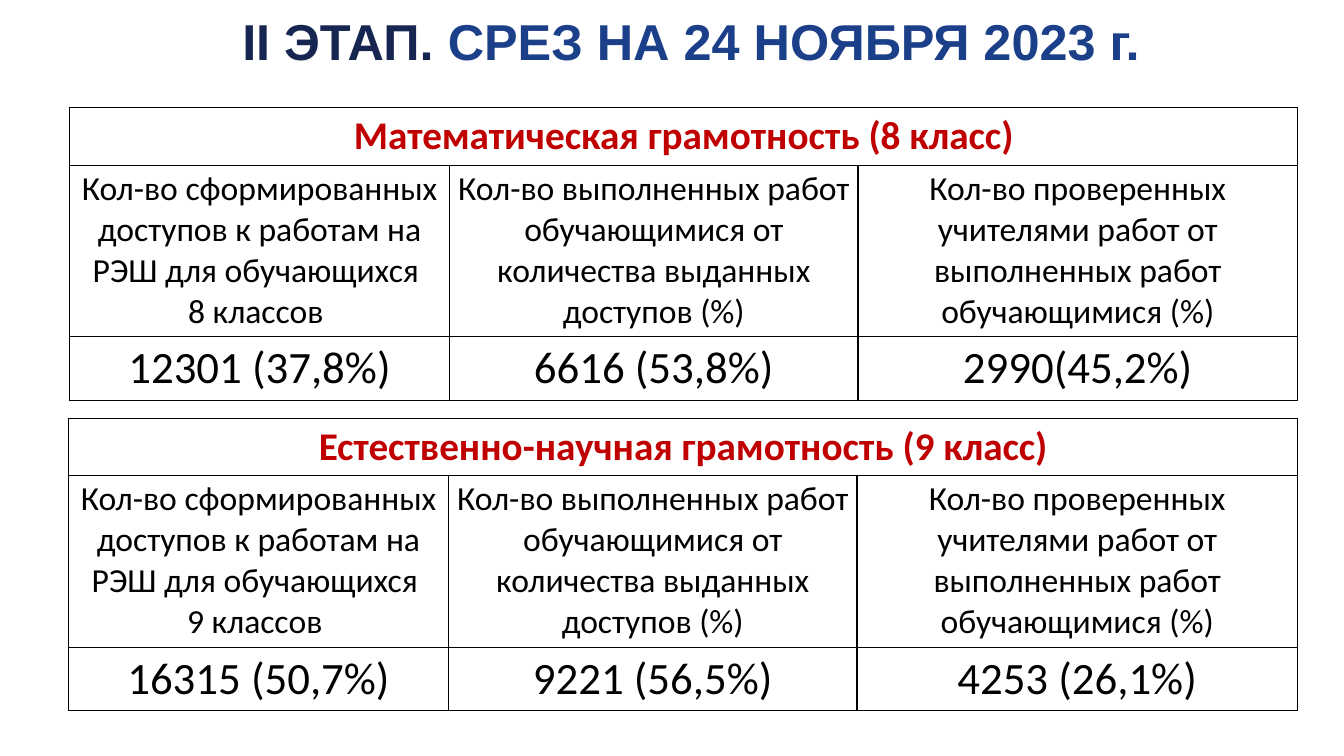
"""Build a slide with two tables of functional literacy results."""
from dataclasses import dataclass

from lxml import etree
from pptx import Presentation
from pptx import util as u
from pptx.dml.color import RGBColor
from pptx.enum import text
from pptx.oxml.ns import qn
from pptx.slide import Slide
from pptx.table import _Cell

COLOURS = {
    "title_start": "172551",
    "title_end": "113494",
    "title_date": "1B4089",
    "heading": "C00000",
    "ink": "000000",
}
ROW_HEIGHTS = (0.57, 1.7, 0.63)


@dataclass(frozen=True)
class ResultTable:
    """Results of one subject and grade, with the table position in inches."""
    subject: str
    grade: int
    values: tuple[str, str, str]
    left: float
    top: float
    widths: tuple[float, float, float]

    def captions(self) -> tuple[str, str, str]:
        """Return the column captions for this grade."""
        return (
            "Кол-во сформированных доступов к работам на РЭШ для обучающихся \n"
            f"{self.grade} классов ",
            "Кол-во выполненных работ обучающимися от количества выданных доступов (%)",
            "Кол-во проверенных учителями работ от выполненных работ обучающимися (%)",
        )


@dataclass(frozen=True)
class CellStyle:
    """Text formatting of a table row."""
    size: int
    colour: str = "ink"
    bold: bool = False
    anchor: text.MSO_ANCHOR = text.MSO_ANCHOR.MIDDLE


HEADING = CellStyle(28, "heading", True)
CAPTION = CellStyle(24, anchor=text.MSO_ANCHOR.TOP)
VALUE = CellStyle(32)

RESULTS = (
    ResultTable("Естественно-научная грамотность", 9,
                ("16315 (50,7%)", "9221 (56,5%)", "4253 (26,1%)"),
                0.68, 4.15, (3.77, 4.05, 4.37)),
    ResultTable("Математическая грамотность", 8,
                ("12301 (37,8%)", "6616 (53,8%)", "2990(45,2%)"),
                0.69, 1.07, (3.77, 4.05, 4.36)),
)


def colour(name: str) -> RGBColor:
    """Return a named colour."""
    return RGBColor.from_string(COLOURS[name])


def add_borders(cell: _Cell) -> None:
    """Draw a thin line on every side of a cell."""
    properties = cell._tc.get_or_add_tcPr()
    for side in ("lnL", "lnR", "lnT", "lnB"):
        line = etree.SubElement(properties, qn(f"a:{side}"), w=str(u.Pt(1)))
        fill = etree.SubElement(line, qn("a:solidFill"))
        etree.SubElement(fill, qn("a:srgbClr"), val=COLOURS["ink"])


def write_cell(cell: _Cell, content: str, style: CellStyle) -> None:
    """Fill a cell with centred text."""
    cell.text = content
    cell.vertical_anchor = style.anchor
    for paragraph in cell.text_frame.paragraphs:
        paragraph.alignment = text.PP_ALIGN.CENTER
        paragraph.font.name = "Calibri"
        paragraph.font.size = u.Pt(style.size)
        paragraph.font.bold = style.bold
        paragraph.font.color.rgb = colour(style.colour)


def add_results(slide: Slide, result: ResultTable) -> None:
    """Add the table of one subject."""
    table = slide.shapes.add_table(
        len(ROW_HEIGHTS), len(result.widths),
        u.Inches(result.left), u.Inches(result.top),
        u.Inches(sum(result.widths)), u.Inches(sum(ROW_HEIGHTS))).table
    table.first_row = table.horz_banding = False
    for column, width in zip(table.columns, result.widths):
        column.width = u.Inches(width)
    for row, height in zip(table.rows, ROW_HEIGHTS):
        row.height = u.Inches(height)
    for cell in table.iter_cells():
        add_borders(cell)
        cell.fill.background()
        cell.margin_left = cell.margin_right = u.Inches(0.07)
        cell.margin_top = cell.margin_bottom = u.Inches(0.03)

    table.cell(0, 0).merge(table.cell(0, len(result.widths) - 1))
    write_cell(table.cell(0, 0), f"{result.subject} ({result.grade} класс)", HEADING)
    for index, (caption, value) in enumerate(zip(result.captions(), result.values)):
        write_cell(table.cell(1, index), caption, CAPTION)
        write_cell(table.cell(2, index), value, VALUE)


def add_title(slide: Slide) -> None:
    """Format the title placeholder and write the stage and date."""
    title = slide.shapes.title
    title.left, title.top = u.Inches(0.19), u.Inches(0.05)
    title.width, title.height = u.Inches(13.33), u.Inches(0.71)
    frame = title.text_frame
    frame.word_wrap = True
    frame.auto_size = text.MSO_AUTO_SIZE.SHAPE_TO_FIT_TEXT
    frame.vertical_anchor = text.MSO_ANCHOR.TOP
    paragraph = frame.paragraphs[0]
    paragraph.alignment = text.PP_ALIGN.CENTER
    paragraph.space_after = u.Pt(6)
    paragraph.font.name = "Arial"
    paragraph.font.size = u.Pt(36)
    paragraph.font.bold = True

    stage = paragraph.add_run()
    stage.text = "II ЭТАП. "
    stage.font.fill.gradient()
    stage.font.fill.gradient_angle = 270
    for stop, name in zip(stage.font.fill.gradient_stops, ("title_start", "title_end")):
        stop.color.rgb = colour(name)
    date = paragraph.add_run()
    date.text = "СРЕЗ НА 24 НОЯБРЯ 2023 г."
    date.font.color.rgb = colour("title_date")


def main() -> None:
    """Create and save the presentation."""
    presentation = Presentation()
    presentation.slide_width = u.Inches(13.33)
    presentation.slide_height = u.Inches(7.5)
    slide = presentation.slides.add_slide(presentation.slide_layouts[5])
    add_title(slide)
    for result in RESULTS:
        add_results(slide, result)
    presentation.save("out.pptx")


if __name__ == "__main__":
    main()
